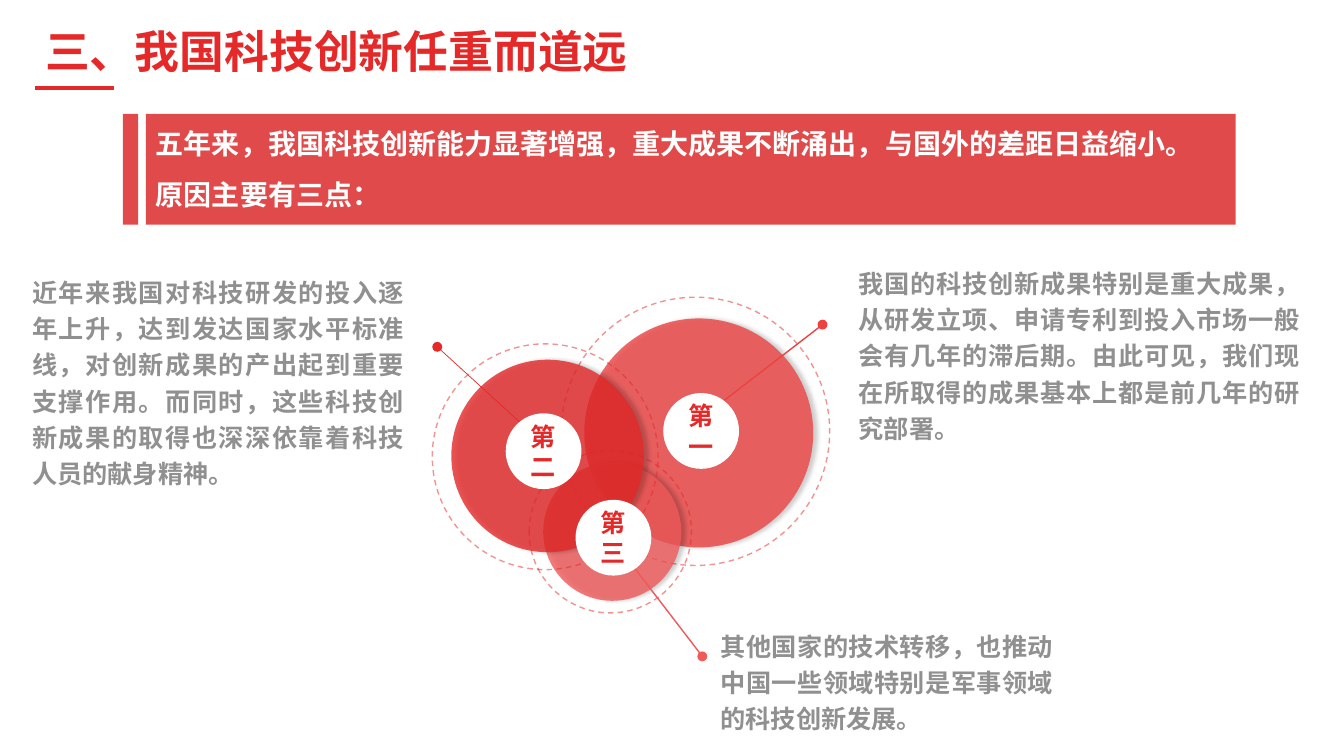
from dataclasses import dataclass

import pptx
import pptx.util
import pptx.dml.color
import pptx.enum.dml
import pptx.enum.shapes
import pptx.enum.text
import pptx.oxml
import pptx.oxml.ns
from pptx.util import Cm

HUES = {"red": "E52828", "mid": "EC4242", "pale": "F05959",
        "band": "E14A4A", "grey": "909090", "white": "FFFFFF"}
SANS = "Noto Sans CJK SC"
NS = pptx.oxml.ns.nsdecls("a")
KIND = pptx.enum.shapes.MSO_SHAPE
ALIGN = pptx.enum.text.PP_ALIGN
BADGE, DOT = 1.91, 0.25


@dataclass
class Round:
    x: float
    y: float
    size: float


@dataclass
class Point:
    """One reason; all lengths are in centimetres."""
    hue: str
    label: str
    disc: Round
    ring: Round
    badge: Round
    dot: Round
    end: tuple[float, float]
    width: float
    box: tuple[float, float, float, float]
    text: str


# Back to front
POINTS = [
    Point("mid", "第一", Round(17.61, 10.91, 5.77), Round(17.53, 10.87, 6.76),
          Round(17.67, 10.86, BADGE), Round(20.73, 8.18, DOT), (17.86, 10.39), 1,
          (21.39, 6.48, 11.63, 4.88),
          "我国的科技创新成果特别是重大成果，从研发立项、申请专利到投入市场一般会有几年的滞后期。"
          "由此可见，我们现在所取得的成果基本上都是前几年的研究部署。"),
    Point("pale", "第三", Round(15.43, 13.4, 3.48), Round(15.38, 13.4, 4.09),
          Round(15.46, 13.55, BADGE), Round(17.7, 16.54, DOT), (15.65, 13.87), 1,
          (17.91, 15.62, 8.89, 3.02),
          "其他国家的技术转移，也推动中国一些领域特别是军事领域的科技创新发展。"),
    Point("red", "第二", Round(13.8, 11.49, 4.85), Round(13.74, 11.51, 5.69),
          Round(13.7, 11.37, BADGE), Round(11.02, 8.74, DOT), (13.44, 10.95), 0.5,
          (0.56, 6.71, 9.88, 5.79),
          "近年来我国对科技研发的投入逐年上升，达到发达国家水平标准线，对创新成果的产出起到重要支撑作用。"
          "而同时，这些科技创新成果的取得也深深依靠着科技人员的献身精神。"),
]


def color(hue: str):
    return pptx.dml.color.RGBColor.from_string(HUES[hue])


def fade(fill, share: int) -> None:
    """Give a solid fill an opacity in percent."""
    tint = fill._xPr.find(".//" + pptx.oxml.ns.qn("a:srgbClr"))
    tint.append(pptx.oxml.parse_xml(f'<a:alpha {NS} val="{share * 1000}"/>'))


def add_shape(slide, kind, box: tuple, hue: str | None):
    shape = slide.shapes.add_shape(kind, *map(Cm, box))
    shape.shadow.inherit = False
    shape.line.fill.background()
    if hue:
        shape.fill.solid()
        shape.fill.fore_color.rgb = color(hue)
    else:
        shape.fill.background()
    return shape


def add_round(slide, spot: Round, hue: str | None):
    half = spot.size / 2
    box = (spot.x - half, spot.y - half, spot.size, spot.size)
    return add_shape(slide, KIND.OVAL, box, hue)


def add_line(slide, start: tuple, end: tuple, hue: str, width: float) -> None:
    line = slide.shapes.add_connector(
        pptx.enum.shapes.MSO_CONNECTOR.STRAIGHT, *map(Cm, start + end))
    line.line.color.rgb = color(hue)
    line.line.width = pptx.util.Pt(width)
    line._element.spPr.append(pptx.oxml.parse_xml(f"<a:effectLst {NS}/>"))


def style(para, face: str, size: int, hue: str, align=None) -> None:
    para.alignment = align
    font = para.font
    font.name, font.size, font.bold = face, pptx.util.Pt(size), True
    font.color.rgb = color(hue)
    font._element.append(pptx.oxml.parse_xml(f'<a:ea {NS} typeface="{SANS}"/>'))


def add_text(slide, box: tuple, text: str, wrap: bool = True):
    frame = slide.shapes.add_textbox(*map(Cm, box)).text_frame
    frame.word_wrap = wrap
    frame.text = text
    return frame.paragraphs


def add_disc(slide, point: Point) -> None:
    disc = add_round(slide, point.disc, point.hue)
    fade(disc.fill, 80)
    glow = disc._element.spPr.find(pptx.oxml.ns.qn("a:effectLst"))
    glow.append(pptx.oxml.parse_xml(
        f'<a:outerShdw {NS} blurRad="38100" dist="38100" dir="0" rotWithShape="0">'
        '<a:srgbClr val="000000"><a:alpha val="23000"/></a:srgbClr></a:outerShdw>'))
    edge = add_round(slide, point.ring, None).line
    edge.color.rgb = color("red")
    edge.width = pptx.util.Pt(1)
    edge.dash_style = pptx.enum.dml.MSO_LINE.DASH
    fade(edge.fill, 50)


def add_badge(slide, point: Point) -> None:
    frame = add_round(slide, point.badge, "white").text_frame
    frame.text = point.label
    frame.word_wrap = True
    frame.vertical_anchor = pptx.enum.text.MSO_ANCHOR.MIDDLE
    style(frame.paragraphs[0], "Arial Narrow", 18, "red", ALIGN.CENTER)


def main() -> None:
    deck = pptx.Presentation()
    deck.slide_width, deck.slide_height = Cm(33.87), Cm(19.05)
    slide = deck.slides.add_slide(deck.slide_layouts[6])

    # Title
    add_line(slide, (0.89, 2.21), (2.87, 2.21), "red", 3)
    title = add_text(slide, (0.89, 0.48, 15.34, 1.63), "三、我国科技创新任重而道远", False)
    style(title[0], "Arial", 32, "red")

    # Banner
    for left, width in ((3.1, 0.38), (3.68, 27.46)):
        add_shape(slide, KIND.RECTANGLE, (left, 2.87, width, 2.79), "band")
    lead = add_text(slide, (3.68, 3.07, 26.97, 2.39),
                    "五年来，我国科技创新能力显著增强，重大成果不断涌出，与国外的差距日益缩小。\n"
                    "原因主要有三点：")
    lead[1].space_before = pptx.util.Pt(12)
    for para in lead:
        style(para, "Arial", 20, "white", ALIGN.JUSTIFY)

    # Overlapping discs with dashed rings
    for point in POINTS:
        add_disc(slide, point)

    # Leaders, badges and reasons
    for point in POINTS:
        add_line(slide, (point.dot.x, point.dot.y), point.end, point.hue, point.width)
        add_round(slide, point.dot, point.hue)
        add_badge(slide, point)
        para = add_text(slide, point.box, point.text)[0]
        para.line_spacing = 1.2
        style(para, SANS, 18, "grey", ALIGN.JUSTIFY)

    deck.save("out.pptx")


if __name__ == "__main__":
    main()
